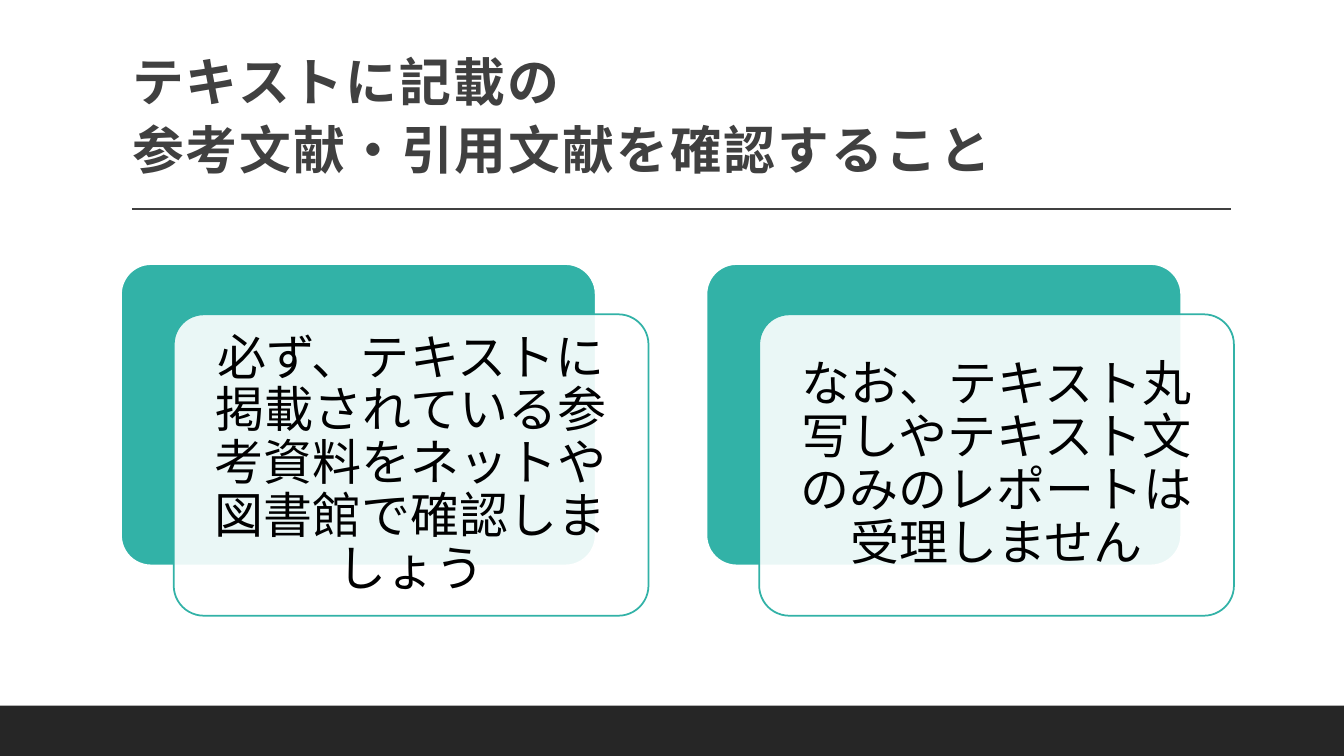
from dataclasses import dataclass

from lxml import etree
from pptx import Presentation
from pptx.dml.color import RGBColor
from pptx.enum import shapes, text
from pptx.oxml import ns
from pptx.util import Pt


@dataclass(frozen=True)
class Theme:
    font: str = "Noto Sans CJK JP"
    white: str = "FFFFFF"
    black: str = "000000"
    teal: str = "32B2A7"
    title: str = "404040"
    footer: str = "262626"
    title_size: float = 37
    body_size: float = 35


THEME = Theme()
WIDTH, HEIGHT = 960, 540
CARD_LEFT, CARD_TOP, CARD_WIDTH, CARD_HEIGHT = 86.4, 188.6, 339.1, 215.3
CARD_PITCH = 418.2
FRONT_DX, FRONT_DY = 37.7, 35.9
TEXT_MARGIN = 6.3

TITLE = "テキストに記載の\n参考文献・引用文献を確認すること"
CARDS = [
    "必ず、テキストに掲載されている参考資料をネットや図書館で確認しましょう",
    "なお、テキスト丸写しやテキスト文のみのレポートは受理しません",
]


def rgb(color):
    return RGBColor.from_string(color)


def add_box(s, kind, x, y, w, h, fill, line=None, opacity=None):
    sp = s.shapes.add_shape(kind, Pt(x), Pt(y), Pt(w), Pt(h))
    sp.shadow.inherit = False
    sp.fill.solid()
    sp.fill.fore_color.rgb = rgb(fill)
    if opacity is not None:
        clr = sp.fill._xPr.find(".//" + ns.qn("a:srgbClr"))
        etree.SubElement(clr, ns.qn("a:alpha"), val=str(opacity * 1000))
    if line:
        sp.line.color.rgb = rgb(line)
        sp.line.width = Pt(1.25)
    else:
        sp.line.fill.background()
    return sp


def add_text(s, content, x, y, w, h, *, size, color, bold=False, spacing=0,
             align=text.PP_ALIGN.LEFT, anchor=text.MSO_ANCHOR.MIDDLE,
             line_spacing=1.0, inset=0):
    tf = s.shapes.add_textbox(Pt(x), Pt(y), Pt(w), Pt(h)).text_frame
    tf.word_wrap = True
    tf.vertical_anchor = anchor
    tf.margin_left = tf.margin_right = Pt(inset)
    tf.margin_top = tf.margin_bottom = Pt(inset)
    p = tf.paragraphs[0]
    p.alignment = align
    p.line_spacing = line_spacing
    for i, line in enumerate(content.split("\n")):
        if i:
            p.add_line_break()
        r = p.add_run()
        r.text = line
        r.font.size = Pt(size)
        r.font.bold = bold
        r.font.color.rgb = rgb(color)
        r.font.name = THEME.font
        rpr = r.font._element
        rpr.set("spc", str(int(spacing * 100)))
        etree.SubElement(rpr, ns.qn("a:ea"), typeface=THEME.font)
    return tf


def add_rule(s, x1, x2, y):
    line = s.shapes.add_connector(shapes.MSO_CONNECTOR.STRAIGHT,
                                  Pt(x1), Pt(y), Pt(x2), Pt(y))
    line.line.color.rgb = rgb(THEME.title)
    line.line.width = Pt(1)
    etree.SubElement(line._element.spPr, ns.qn("a:effectLst"))


def add_card(s, x, y, content):
    rounded = shapes.MSO_SHAPE.ROUNDED_RECTANGLE
    front_x, front_y = x + FRONT_DX, y + FRONT_DY
    back = add_box(s, rounded, x, y, CARD_WIDTH, CARD_HEIGHT,
                   THEME.teal, THEME.white)
    front = add_box(s, rounded, front_x, front_y, CARD_WIDTH, CARD_HEIGHT,
                    THEME.white, THEME.teal, opacity=90)
    for sp in (back, front):
        sp.adjustments[0] = 0.1
    add_text(s, content, front_x + TEXT_MARGIN, front_y + TEXT_MARGIN,
             CARD_WIDTH - 2 * TEXT_MARGIN, CARD_HEIGHT - 2 * TEXT_MARGIN,
             size=THEME.body_size, color=THEME.black,
             align=text.PP_ALIGN.CENTER, line_spacing=0.9, inset=10.5)


def main():
    prs = Presentation()
    prs.slide_width, prs.slide_height = Pt(WIDTH), Pt(HEIGHT)
    s = prs.slides.add_slide(prs.slide_layouts[6])
    s.background.fill.solid()
    s.background.fill.fore_color.rgb = rgb(THEME.white)

    # Title and rule
    add_text(s, TITLE, CARD_LEFT, 22.3, 792, 114.5, size=THEME.title_size,
             color=THEME.title, bold=True, spacing=1.5, line_spacing=1.1,
             anchor=text.MSO_ANCHOR.BOTTOM, inset=8)
    add_rule(s, 94.3, 879.1, 149.4)

    # Footer band
    add_box(s, shapes.MSO_SHAPE.RECTANGLE, 0, 504, WIDTH, 36, THEME.footer)

    # Cards
    for i, content in enumerate(CARDS):
        add_card(s, CARD_LEFT + i * CARD_PITCH, CARD_TOP, content)

    prs.save("out.pptx")


if __name__ == "__main__":
    main()
